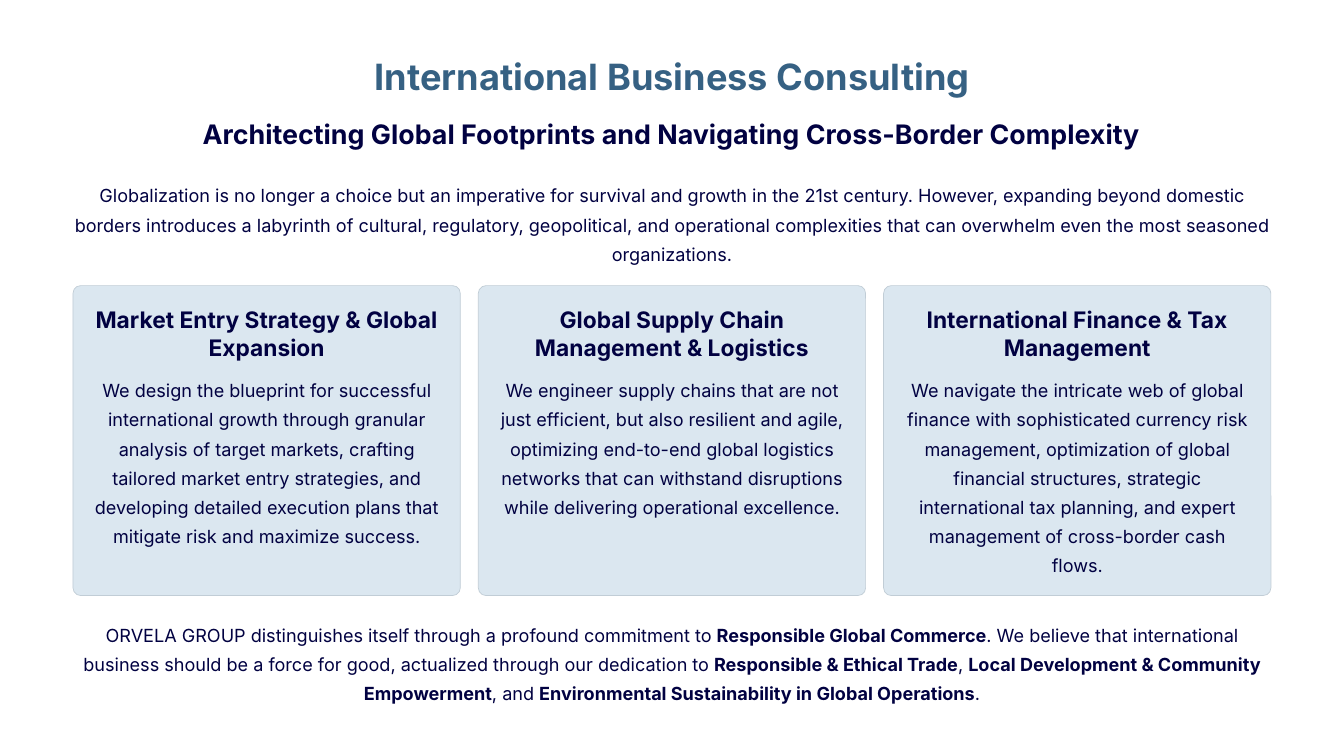
from pptx import Presentation
from pptx.dml.color import RGBColor
from pptx.enum.shapes import MSO_SHAPE as SHAPE
from pptx.enum.text import PP_ALIGN as ALIGN
from pptx.util import Pt

NAVY, STEEL, PALE, EDGE = "010141", "366183", "DBE7F0", "C1CDD6"


def rgb(value):
    return RGBColor.from_string(value)


def add_text(box, runs, size, spacing, color=NAVY, wrap=True):
    """Centred paragraph from (text, bold) runs; box is left, top, width, height."""
    tf = s.shapes.add_textbox(*[Pt(v) for v in box]).text_frame
    tf.word_wrap = wrap
    tf.margin_left = tf.margin_right = tf.margin_top = tf.margin_bottom = 0
    p = tf.paragraphs[0]
    p.alignment = ALIGN.CENTER
    p.line_spacing = Pt(spacing)
    p.font.name, p.font.size, p.font.color.rgb = "Inter", Pt(size), rgb(color)
    for text, bold in runs:
        r = p.add_run()
        r.text, r.font.bold = text, bold


prs = Presentation()
prs.slide_width, prs.slide_height = Pt(1152), Pt(648)
s = prs.slides.add_slide(prs.slide_layouts[6])

LEFT, WIDTH = 62.6, 1026.8

# Headings and introduction
add_text((LEFT, 44.6, WIDTH, 39), [("International Business Consulting", True)],
         31, 39, STEEL, wrap=False)
add_text((LEFT, 99.4, WIDTH, 29.5),
         [("Architecting Global Footprints and Navigating Cross-Border Complexity", True)],
         23, 29, wrap=False)
add_text((LEFT, 152, WIDTH, 75),
         [("Globalization is no longer a choice but an imperative for survival and growth "
           "in the 21st century. However, expanding beyond domestic borders introduces a "
           "labyrinth of cultural, regulatory, geopolitical, and operational complexities "
           "that can overwhelm even the most seasoned organizations.", False)],
         15.5, 25)

# Service cards
CARD_W, CARD_TOP, CARD_H, PAD = 332, 244.8, 265.7, 16.2
pitch = (WIDTH - CARD_W) / 2
cards = [
    ("Market Entry Strategy & Global Expansion",
     "We design the blueprint for successful international growth through granular "
     "analysis of target markets, crafting tailored market entry strategies, and "
     "developing detailed execution plans that mitigate risk and maximize success."),
    ("Global Supply Chain Management & Logistics",
     "We engineer supply chains that are not just efficient, but also resilient and "
     "agile, optimizing end-to-end global logistics networks that can withstand "
     "disruptions while delivering operational excellence."),
    ("International Finance & Tax Management",
     "We navigate the intricate web of global finance with sophisticated currency risk "
     "management, optimization of global financial structures, strategic international "
     "tax planning, and expert management of cross-border cash flows."),
]
for i, (title, body) in enumerate(cards):
    x = LEFT + i * pitch
    sp = s.shapes.add_shape(SHAPE.ROUNDED_RECTANGLE, Pt(x), Pt(CARD_TOP),
                            Pt(CARD_W), Pt(CARD_H))
    sp.adjustments[0] = 0.025
    sp.shadow.inherit = False
    sp.fill.solid()
    sp.fill.fore_color.rgb = rgb(PALE)
    sp.line.color.rgb = rgb(EDGE)
    sp.line.width = Pt(0.6)
    inner = CARD_W - 2 * PAD
    add_text((x + PAD, 261.4, inner, 49), [(title, True)], 19.5, 24)
    add_text((x + PAD, 319, inner, 175), [(body, False)], 15.5, 25)

# Closing commitment
add_text((LEFT, 528.5, WIDTH, 75), [
    ("ORVELA GROUP distinguishes itself through a profound commitment to ", False),
    ("Responsible Global Commerce", True),
    (". We believe that international business should be a force for good, "
     "actualized through our dedication to ", False),
    ("Responsible & Ethical Trade", True),
    (", ", False),
    ("Local Development & Community Empowerment", True),
    (", and ", False),
    ("Environmental Sustainability in Global Operations", True),
    (".", False),
], 15.5, 25)

prs.save("out.pptx")
